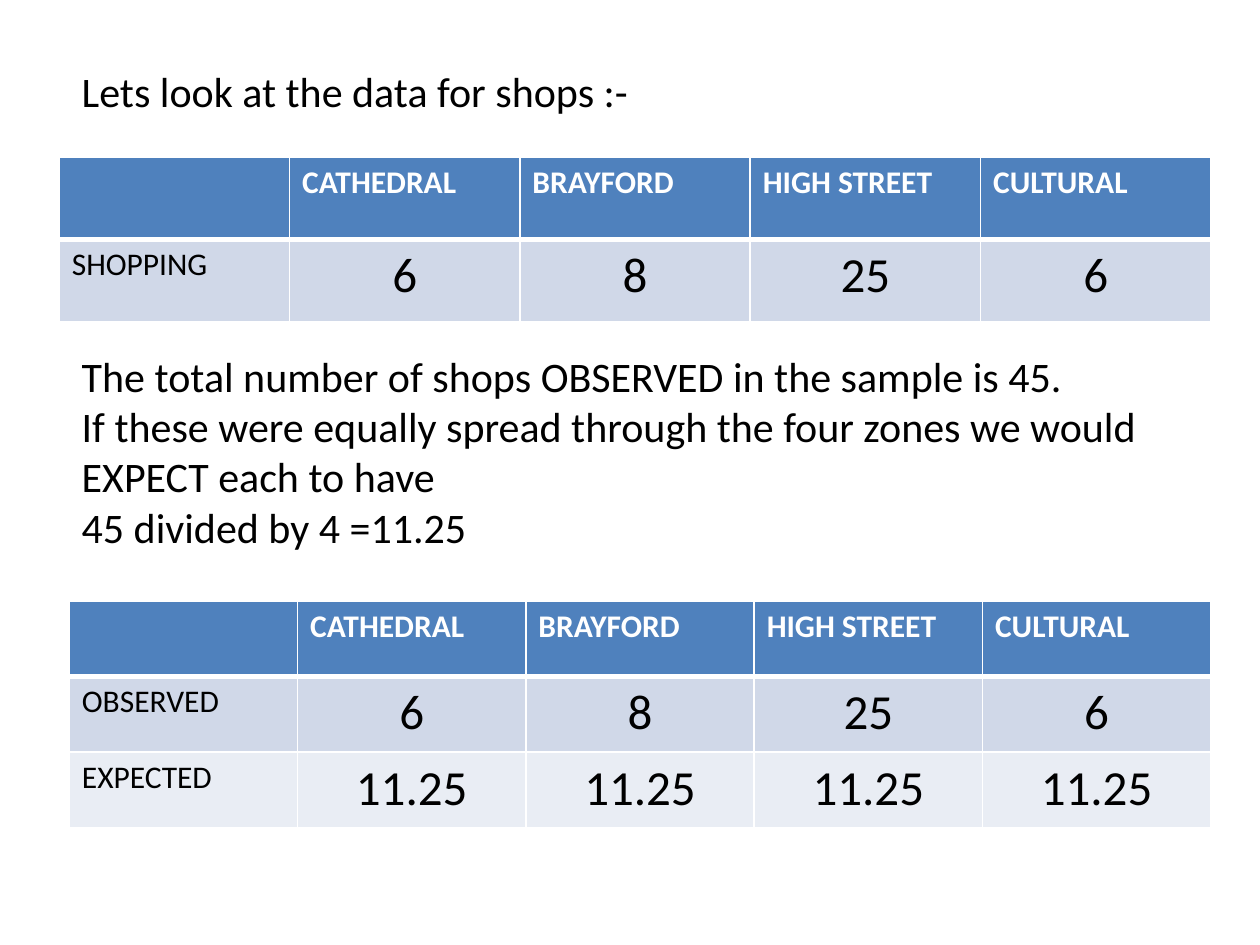
from lxml.etree import SubElement
from pptx import Presentation
from pptx.dml.color import RGBColor
from pptx.enum.text import MSO_AUTO_SIZE, PP_ALIGN
from pptx.oxml.ns import qn
from pptx.util import Inches, Pt

BLACK = RGBColor(0x00, 0x00, 0x00)
WHITE = RGBColor(0xFF, 0xFF, 0xFF)
HEADER_BLUE = RGBColor(0x4F, 0x81, 0xBD)
BAND_BLUE = RGBColor(0xD0, 0xD8, 0xE8)
PALE_BLUE = RGBColor(0xE9, 0xED, 0xF4)
ROW_FILLS = [HEADER_BLUE, BAND_BLUE, PALE_BLUE]

HEADER = ["", "CATHEDRAL", "BRAYFORD", "HIGH STREET", "CULTURAL"]
SHOP_COUNTS = ["6", "8", "25", "6"]


def set_font(paragraph, size, color, bold=False):
    for span in paragraph.runs:
        span.font.name = "Calibri"
        span.font.size = Pt(size)
        span.font.color.rgb = color
        span.font.bold = bold


def add_border(cell, side, width):
    """Draw a white line of width points on side L, R, T or B of the cell."""
    line = SubElement(cell._tc.get_or_add_tcPr(), qn(f"a:ln{side}"), w=str(Pt(width)))
    fill = SubElement(line, qn("a:solidFill"))
    SubElement(fill, qn("a:srgbClr"), val=str(WHITE))


deck = Presentation()
deck.slide_width = Inches(10)
deck.slide_height = Inches(7.5)
page = deck.slides.add_slide(deck.slide_layouts[6])

text_boxes = [
    (0.47, 8.83, 0.5, ["Lets look at the data for shops :-"]),
    (2.73, 8.98, 1.72, [
        "The total number of shops OBSERVED in the sample is 45.",
        "If these were equally spread through the four zones we would EXPECT each to have",
        "45 divided by 4 =11.25",
    ]),
]
for top, width, height, lines in text_boxes:
    box = page.shapes.add_textbox(Inches(0.55), Inches(top), Inches(width), Inches(height))
    frame = box.text_frame
    frame.word_wrap = True
    frame.auto_size = MSO_AUTO_SIZE.SHAPE_TO_FIT_TEXT
    frame.text = "\n".join(lines)
    for paragraph in frame.paragraphs:
        set_font(paragraph, 24, BLACK)

tables = [
    (0.47, 1.25, 9.14, 0.65, [HEADER, ["SHOPPING"] + SHOP_COUNTS]),
    (0.55, 4.77, 9.06, 0.6, [
        HEADER,
        ["OBSERVED"] + SHOP_COUNTS,
        ["EXPECTED"] + ["11.25"] * 4,
    ]),
]
for left, top, width, row_height, rows in tables:
    table = page.shapes.add_table(
        len(rows), len(HEADER),
        Inches(left), Inches(top), Inches(width), Inches(row_height * len(rows)),
    ).table
    for row_index, values in enumerate(rows):
        is_header = row_index == 0
        for column_index, value in enumerate(values):
            cell = table.cell(row_index, column_index)
            for side in "LRTB":
                under_header = (row_index, side) in [(0, "B"), (1, "T")]
                add_border(cell, side, 3 if under_header else 1)
            cell.fill.solid()
            cell.fill.fore_color.rgb = ROW_FILLS[row_index]
            cell.text_frame.text = value
            paragraph = cell.text_frame.paragraphs[0]
            if is_header:
                set_font(paragraph, 18, WHITE, bold=True)
            elif column_index == 0:
                set_font(paragraph, 18, BLACK)
            else:
                paragraph.alignment = PP_ALIGN.CENTER
                set_font(paragraph, 28, BLACK)

deck.save("out.pptx")
